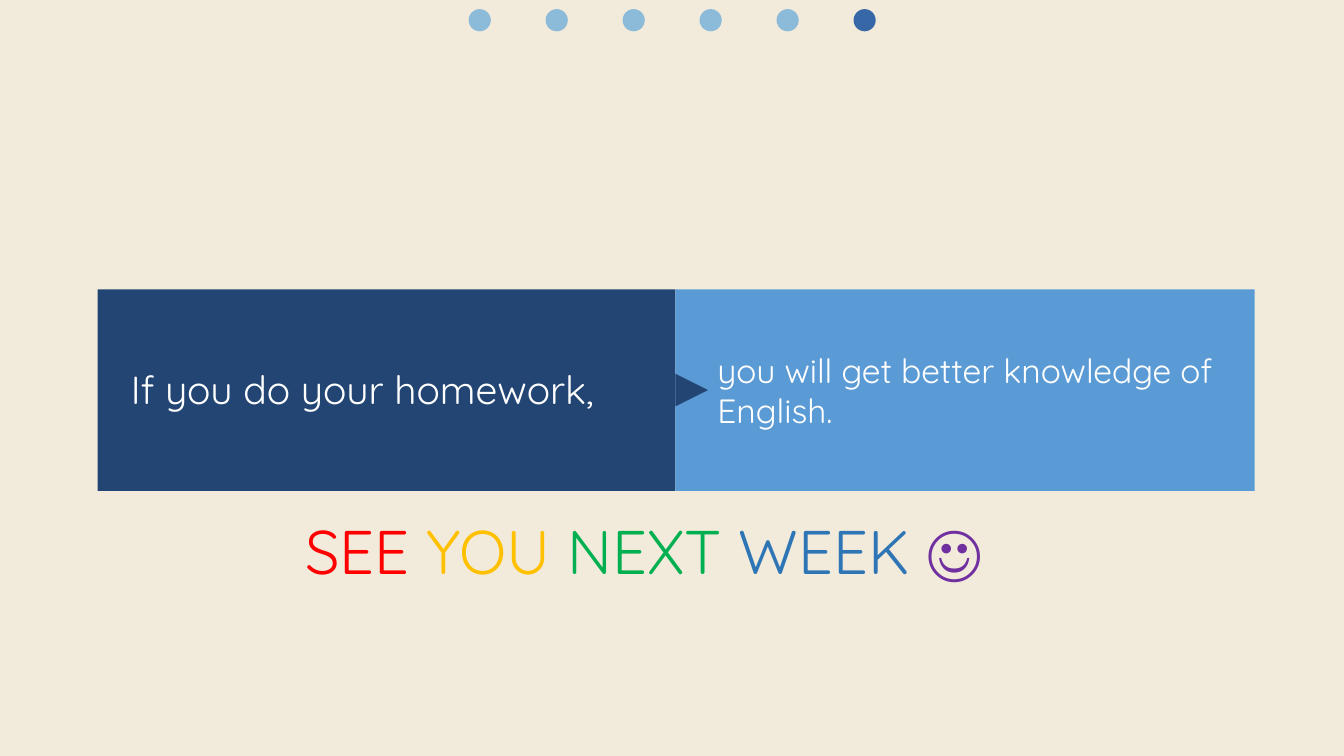
from pptx import Presentation
from pptx.dml.color import RGBColor
from pptx.enum.shapes import MSO_SHAPE
from pptx.enum.text import MSO_AUTO_SIZE
from pptx.util import Cm, Pt

OVAL = MSO_SHAPE.OVAL
RECT = MSO_SHAPE.RECTANGLE
TRIANGLE = MSO_SHAPE.ISOSCELES_TRIANGLE
GROW = MSO_AUTO_SIZE.SHAPE_TO_FIT_TEXT

CREAM = RGBColor(0xF2, 0xEB, 0xDC)
PALE_BLUE = RGBColor(0x8B, 0xBB, 0xD9)
DOT_BLUE = RGBColor(0x37, 0x67, 0xA6)
NAVY = RGBColor(0x22, 0x45, 0x73)
SKY = RGBColor(0x5B, 0x9B, 0xD5)
WHITE = RGBColor(0xFF, 0xFF, 0xFF)
RED = RGBColor(0xFF, 0x00, 0x00)
AMBER = RGBColor(0xFF, 0xC0, 0x00)
GREEN = RGBColor(0x00, 0xB0, 0x50)
BLUE = RGBColor(0x2E, 0x75, 0xB6)
PURPLE = RGBColor(0x70, 0x30, 0xA0)


class SlideBuilder:
    font = "Quicksand"

    def __init__(self, slide, background):
        self.s = slide
        fill = slide.background.fill
        fill.solid()
        fill.fore_color.rgb = background

    def shape(self, kind, x, y, w, h, color, rotation=0):
        sp = self.s.shapes.add_shape(kind, Cm(x), Cm(y), Cm(w), Cm(h))
        sp.shadow.inherit = False
        sp.fill.solid()
        sp.fill.fore_color.rgb = color
        sp.line.fill.background()
        sp.rotation = rotation

    def text(self, x, y, w, h, size, parts):
        tf = self.s.shapes.add_textbox(Cm(x), Cm(y), Cm(w), Cm(h)).text_frame
        tf.word_wrap = True
        tf.auto_size = GROW
        p = tf.paragraphs[0]
        p.font.name = self.font
        p.font.size = Pt(size)
        for words, color in parts:
            r = p.add_run()
            r.text = words
            r.font.color.rgb = color


def main():
    prs = Presentation()
    prs.slide_width, prs.slide_height = Cm(33.87), Cm(19.05)
    b = SlideBuilder(prs.slides.add_slide(prs.slide_layouts[6]), CREAM)

    # Progress dots, the last one current
    dots = 6
    for i in range(dots):
        color = DOT_BLUE if i == dots - 1 else PALE_BLUE
        b.shape(OVAL, 11.81 + i * 1.94, 0.23, 0.56, 0.56, color)

    # Condition and result panels with the pointer between them
    left, middle, right = 2.46, 17.02, 31.62
    top, height, tip = 7.29, 5.08, 0.82
    b.shape(RECT, left, top, middle - left, height, NAVY)
    b.shape(RECT, middle, top, right - middle, height, SKY)
    b.shape(TRIANGLE, middle, top + (height - tip) / 2, tip, tip, NAVY, 90)

    # Sentence halves
    b.text(3.05, 9.07, 13.61, 1.45, 28, [("If you do your homework,", WHITE)])
    b.text(17.83, 8.69, 13.54, 2.31, 24,
           [("you will get better knowledge of English.", WHITE)])

    # Farewell
    b.text(7.44, 12.8, 19.99, 2.13, 44,
           [("SEE ", RED), ("YOU ", AMBER), ("NEXT ", GREEN),
            ("WEEK ", BLUE), ("☺", PURPLE)])

    prs.save("out.pptx")


if __name__ == "__main__":
    main()
